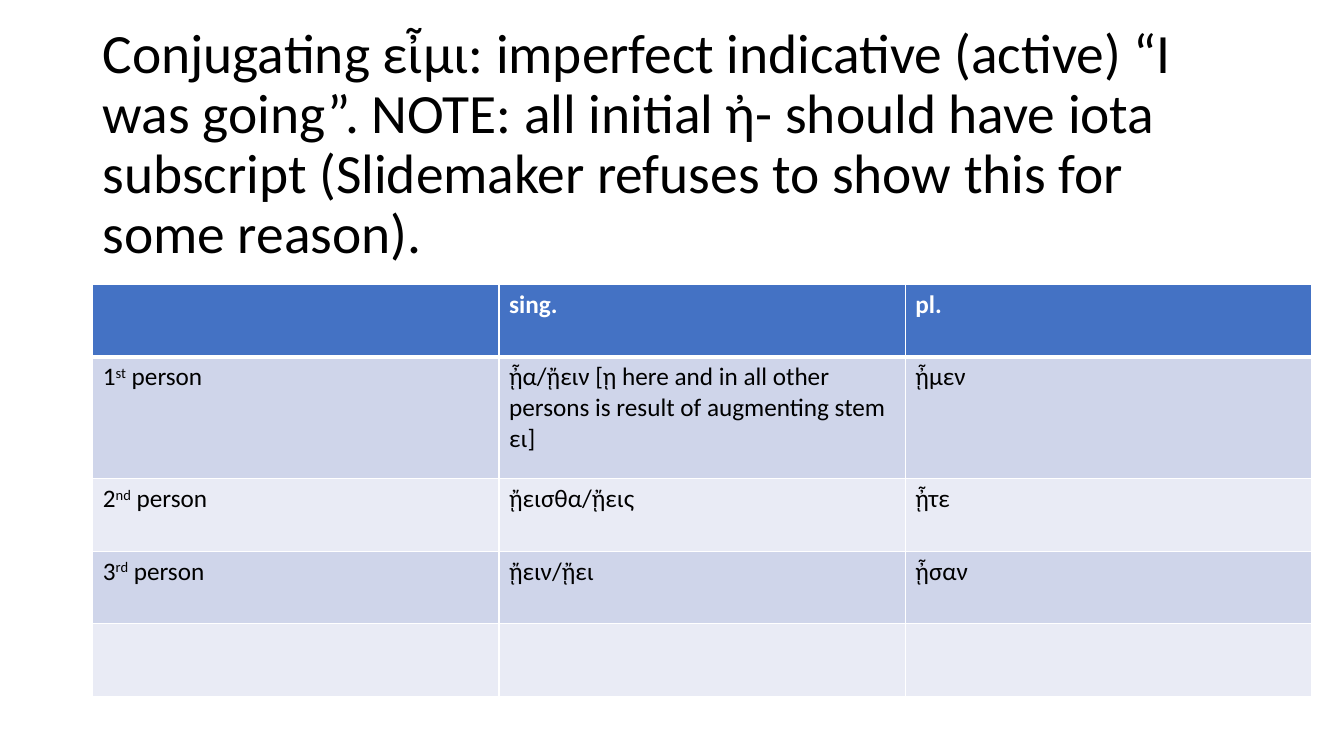
from lxml.etree import SubElement
from pptx import Presentation
from pptx.dml.color import RGBColor
from pptx.enum.text import MSO_ANCHOR
from pptx.oxml.ns import qn
from pptx.util import Inches, Pt

FONT = "Calibri"
BLACK, WHITE = "000000", "FFFFFF"
HEADER_FILL = "4472C4"
BAND_FILLS = ["CFD5EA", "E9EBF5"]

TITLE = ("Conjugating εἶμι: imperfect indicative (active) “I was going”. "
         "NOTE: all initial ἠ- should have iota subscript "
         "(Slidemaker refuses to show this for some reason).")
HEADINGS = ["", "sing.", "pl."]
FORMS = [
    (("1", "st"), "ᾖα/ᾔειν [ῃ here and in all other persons is result of augmenting stem ει]", "ᾖμεν"),
    (("2", "nd"), "ᾔεισθα/ᾔεις", "ᾖτε"),
    (("3", "rd"), "ᾔειν/ᾔει", "ᾖσαν"),
    (None, "", ""),
]
COLUMN_WIDTH = 4.03
ROW_HEIGHTS = [0.72, 1.21, 0.72, 0.72, 0.72]


def rgb(color):
    return RGBColor.from_string(color)


def add_run(p, text, size=18, color=BLACK, bold=False, raised=False):
    r = p.add_run()
    r.text = text
    r.font.name = FONT
    r.font.size = Pt(size)
    r.font.bold = bold
    r.font.color.rgb = rgb(color)
    if raised:
        r.font._element.set("baseline", "30000")


def set_borders(cell, **widths):
    """Draw white borders; widths are in points, keyed by side (L, R, T, B)."""
    tcPr = cell._tc.get_or_add_tcPr()
    for side in "LRTB":
        ln = SubElement(tcPr, qn(f"a:ln{side}"), w=str(Pt(widths.get(side, 1))))
        fill = SubElement(ln, qn("a:solidFill"))
        SubElement(fill, qn("a:srgbClr"), val=WHITE)


def style_cell(cell, color, **widths):
    set_borders(cell, **widths)
    cell.fill.solid()
    cell.fill.fore_color.rgb = rgb(color)


def add_title(s, left, top, width, height):
    box = s.shapes.add_textbox(Inches(left), Inches(top), Inches(width), Inches(height))
    tf = box.text_frame
    tf.word_wrap = True
    tf.vertical_anchor = MSO_ANCHOR.MIDDLE
    p = tf.paragraphs[0]
    p.line_spacing = 0.9
    add_run(p, TITLE, size=39.6)


def add_conjugation_table(s, left, top):
    table = s.shapes.add_table(
        len(ROW_HEIGHTS), len(HEADINGS), Inches(left), Inches(top),
        Inches(COLUMN_WIDTH * len(HEADINGS)), Inches(sum(ROW_HEIGHTS))).table
    for column in table.columns:
        column.width = Inches(COLUMN_WIDTH)
    for row, height in zip(table.rows, ROW_HEIGHTS):
        row.height = Inches(height)

    for col, heading in enumerate(HEADINGS):
        cell = table.cell(0, col)
        style_cell(cell, HEADER_FILL, B=3)
        if heading:
            add_run(cell.text_frame.paragraphs[0], heading, color=WHITE, bold=True)

    for i, (person, *forms) in enumerate(FORMS):
        cells = table.rows[i + 1].cells
        for cell in cells:
            style_cell(cell, BAND_FILLS[i % 2], T=3 if i == 0 else 1)
        if person:
            number, suffix = person
            p = cells[0].text_frame.paragraphs[0]
            add_run(p, number)
            add_run(p, suffix, raised=True)
            add_run(p, " person")
        for col, form in enumerate(forms, start=1):
            if form:
                add_run(cells[col].text_frame.paragraphs[0], form)


def main():
    prs = Presentation()
    prs.slide_width, prs.slide_height = Inches(13.33), Inches(7.5)
    s = prs.slides.add_slide(prs.slide_layouts[6])
    add_title(s, 0.92, 0.4, 11.5, 2.09)
    add_conjugation_table(s, 0.92, 2.82)
    prs.save("out.pptx")


if __name__ == "__main__":
    main()
